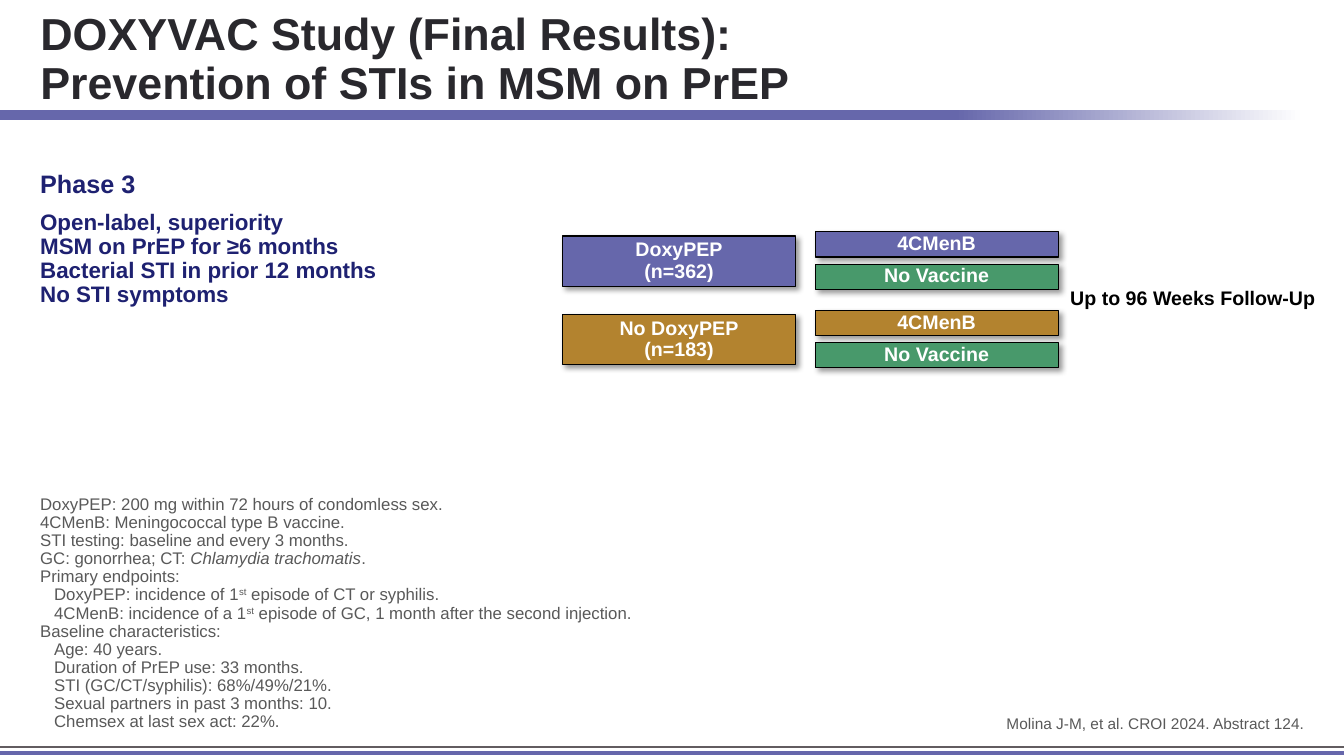
from pptx import Presentation
from pptx.dml.color import RGBColor
from pptx.enum.shapes import MSO_CONNECTOR as CONN, MSO_SHAPE as SHAPE
from pptx.enum.text import MSO_ANCHOR as ANCHOR, MSO_AUTO_SIZE as AUTO, PP_ALIGN as ALIGN
from pptx.oxml import parse_xml
from pptx.oxml.ns import nsdecls
from pptx.util import Pt

COLORS = {
    "purple": "6667AB", "gold": "B3832F", "green": "48996B", "rule": "625C60",
    "title": "29282D", "navy": "1E2171", "gray": "595959",
    "white": "FFFFFF", "black": "000000",
}
SUP = {"baseline": 30000}
INDENT = 10

TITLE = ["DOXYVAC Study (Final Results):", "Prevention of STIs in MSM on PrEP"]
CRITERIA = ["Open-label, superiority", "MSM on PrEP for ≥6 months",
            "Bacterial STI in prior 12 months", "No STI symptoms"]
# Each footnote: indent level, then its runs with their own formats
FOOTNOTES = [
    (0, [("DoxyPEP: 200 mg within 72 hours of condomless sex.", {})]),
    (0, [("4CMenB: Meningococcal type B vaccine.", {})]),
    (0, [("STI testing: baseline and every 3 months.", {})]),
    (0, [("GC: gonorrhea; CT: ", {}), ("Chlamydia trachomatis", {"italic": True}), (".", {})]),
    (0, [("Primary endpoints:", {})]),
    (1, [("DoxyPEP: incidence of 1", {}), ("st", SUP), (" episode of CT or syphilis.", {})]),
    (1, [("4CMenB: incidence of a 1", {}), ("st", SUP),
         (" episode of GC, 1 month after the second injection.", {})]),
    (0, [("Baseline characteristics:", {})]),
    (1, [("Age: 40 years.", {})]),
    (1, [("Duration of PrEP use: 33 months.", {})]),
    (1, [("STI (GC/CT/syphilis): 68%/49%/21%.", {})]),
    (1, [("Sexual partners in past 3 months: 10.", {})]),
    (1, [("Chemsex at last sex act: 22%.", {})]),
]
ARMS = [("DoxyPEP", "(n=362)", "purple"), ("No DoxyPEP", "(n=183)", "gold")]


def rgb(name):
    return RGBColor.from_string(COLORS[name])


def pts(*values):
    return [Pt(v) for v in values]


def add_run(p, text, size, color, bold=False, italic=False, baseline=0):
    r = p.add_run()
    r.text = text
    fmt = {"name": "Arial", "size": Pt(size), "bold": bold, "italic": italic}
    for key, value in fmt.items():
        setattr(r.font, key, value)
    r.font.color.rgb = rgb(color)
    if baseline:
        r._r.get_or_add_rPr().set("baseline", str(baseline))


def add_par(tf, index, runs, size, color, bold=False, level=0, **fmt):
    p = tf.add_paragraph() if index else tf.paragraphs[0]
    for key, value in {"line_spacing": 0.9, "alignment": ALIGN.LEFT, **fmt}.items():
        setattr(p, key, value)
    if level:
        p._p.get_or_add_pPr().set("marL", str(Pt(INDENT * level)))
    for text, run_fmt in runs:
        add_run(p, text, size, color, bold, **run_fmt)
    return p


def text_box(s, box):
    tf = s.shapes.add_textbox(*pts(*box)).text_frame
    tf.word_wrap = True
    tf.auto_size = AUTO.SHAPE_TO_FIT_TEXT
    return tf


def add_rule(s, x1, x2, y, color, width):
    line = s.shapes.add_connector(CONN.STRAIGHT, *pts(x1, y, x2, y))
    line.line.color.rgb = rgb(color)
    line.line.width = Pt(width)
    line._element.spPr.append(parse_xml(f"<a:effectLst {nsdecls('a')}/>"))


def add_card(s, box, lines, color):
    """Outlined, shadowed block with centred bold white lines."""
    sp = s.shapes.add_shape(SHAPE.RECTANGLE, *pts(*box))
    sp.fill.solid()
    sp.fill.fore_color.rgb = rgb(color)
    sp.line.color.rgb = rgb("black")
    sp.line.width = Pt(0.75)
    sp._element.spPr.append(parse_xml(
        f'<a:effectLst {nsdecls("a")}><a:outerShdw blurRad="{Pt(4)}" dist="{Pt(3)}" '
        f'dir="2700000" algn="tl" rotWithShape="0"><a:srgbClr val="{COLORS["black"]}">'
        '<a:alpha val="40000"/></a:srgbClr></a:outerShdw></a:effectLst>'))
    tf = sp.text_frame
    tf.vertical_anchor = ANCHOR.MIDDLE
    for side in ("left", "right", "top", "bottom"):
        setattr(tf, f"margin_{side}", 0)
    for i, line in enumerate(lines):
        add_par(tf, i, [(line, {})], 14, "white", True, alignment=ALIGN.CENTER)


def add_frame(s, left, right, band_top, bottom):
    # Fading band under the title
    band = s.shapes.add_shape(SHAPE.RECTANGLE, *pts(left, band_top, right - left, 7.2))
    band.shadow.inherit = False
    band.line.fill.background()
    band.fill.gradient()
    band.fill.gradient_angle = 0
    for stop, (pos, color) in zip(band.fill.gradient_stops, [(0.71, "purple"), (0.97, "white")]):
        stop.position = pos
        stop.color.rgb = rgb(color)
    # Double rule at the foot
    add_rule(s, left, right, bottom - 6.5, "rule", 1.75)
    add_rule(s, left, right, bottom - 2.2, "purple", 3.25)


def add_title(s, box, lines):
    title = s.shapes.title
    for key, value in zip(("left", "top", "width", "height"), pts(*box)):
        setattr(title, key, value)
    tf = title.text_frame
    tf.word_wrap = True
    tf.auto_size = AUTO.NONE
    tf.vertical_anchor = ANCHOR.BOTTOM
    first, second = lines
    p = add_par(tf, 0, [(first, {})], 32, "title", True, space_before=Pt(0))
    p.add_line_break()
    add_run(p, second, 32, "title", True)


def add_criteria(s, box):
    tf = text_box(s, box)
    add_par(tf, 0, [("Phase 3", {})], 18, "navy", True, space_after=Pt(3))
    for i, line in enumerate(CRITERIA, 1):
        add_par(tf, i, [(line, {})], 16, "navy", True, space_before=Pt(6 if i == 1 else 0))


def add_design(s, box):
    """Two arms, each split into vaccine and no vaccine, then follow-up."""
    left, top, width, height = box
    arm_w, split_x, split_w, bar_h = 166.5, 180.5, 173.5, 18
    for i, (name, count, color) in enumerate(ARMS):
        y = top + i * 56
        add_card(s, (left, y + 3, arm_w, 36), [name, count], color)
        for j, (label, fill) in enumerate([("4CMenB", color), ("No Vaccine", "green")]):
            add_card(s, (left + split_x, y + j * 23, split_w, bar_h), [label], fill)
    x = left + split_x + split_w
    tf = text_box(s, (x - 1, top + height / 2 - 11.5, left + width - x, 22))
    add_par(tf, 0, [("Up to 96 Weeks Follow-Up", {})], 14, "black", True,
            alignment=ALIGN.CENTER)


def add_footnotes(s, box):
    tf = text_box(s, box)
    for i, (level, runs) in enumerate(FOOTNOTES):
        add_par(tf, i, runs, 12, "gray", level=level)


def add_citation(s, box):
    add_par(text_box(s, box), 0, [("Molina J-M, et al. CROI 2024. Abstract 124.", {})],
            11, "gray", alignment=ALIGN.RIGHT)


def main():
    prs = Presentation()
    prs.slide_width, prs.slide_height = pts(960, 540)
    s = prs.slides.add_slide(prs.slide_layouts[5])
    add_frame(s, -0.5, 960.5, 78.5, 540)
    add_title(s, (21.6, 15, 923, 66.3), TITLE)
    add_criteria(s, (21.6, 118.8, 294.5, 106))
    add_design(s, (401.8, 165.6, 548.5, 97))
    add_footnotes(s, (21.6, 350.6, 576, 177))
    add_citation(s, (610.6, 508.3, 328.3, 19.5))
    prs.save("out.pptx")


if __name__ == "__main__":
    main()
